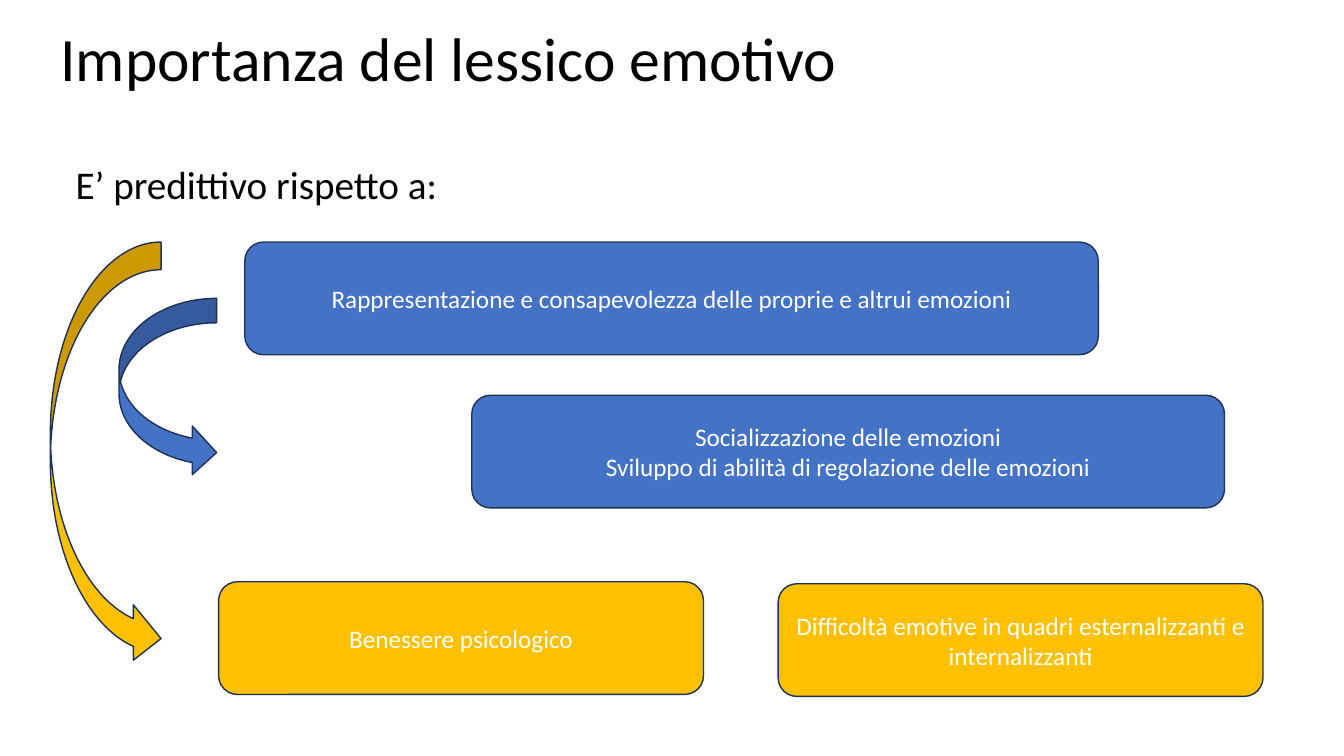
import pptx
import pptx.util
import pptx.dml.color
import pptx.enum.shapes
import pptx.enum.text
import lxml.etree

Cm, Pt = pptx.util.Cm, pptx.util.Pt
RGBColor = pptx.dml.color.RGBColor
MSO_SHAPE = pptx.enum.shapes.MSO_SHAPE
PP_ALIGN = pptx.enum.text.PP_ALIGN
MSO_ANCHOR = pptx.enum.text.MSO_ANCHOR
MSO_AUTO_SIZE = pptx.enum.text.MSO_AUTO_SIZE

BLUE = RGBColor(0x44, 0x72, 0xC4)
GOLD = RGBColor(0xFF, 0xC0, 0x00)
OUTLINE = RGBColor(0x1E, 0x32, 0x56)
BLACK = RGBColor(0, 0, 0)
WHITE = RGBColor(0xFF, 0xFF, 0xFF)
FONT = "Calibri"
BOX_HEIGHT = 2.84

# Content; positions and sizes in centimetres
TITLE = "Importanza del lessico emotivo"
INTRO = "E’ predittivo rispetto a:"
BOXES = [  # text, colour, left, top, width
    ("Socializzazione delle emozioni\n"
     "Sviluppo di abilità di regolazione delle emozioni", BLUE, 11.89, 9.96, 18.97),
    ("Rappresentazione e consapevolezza delle proprie e altrui emozioni",
     BLUE, 6.17, 6.1, 21.51),
    ("Difficoltà emotive in quadri esternalizzanti e internalizzanti",
     GOLD, 19.61, 14.71, 12.22),
    ("Benessere psicologico", GOLD, 5.51, 14.66, 12.22),
]
ARROWS = [  # colour, left, top, width, height
    (BLUE, 3, 7.52, 2.46, 4.5),
    (GOLD, 1.27, 6.1, 2.79, 10.69),
]


def write(sp, text, size, color, align, anchor):
    tf = sp.text_frame
    tf.text = text
    tf.word_wrap = True
    tf.auto_size = MSO_AUTO_SIZE.NONE
    tf.vertical_anchor = anchor
    for p in tf.paragraphs:
        p.alignment = align
        for r in p.runs:
            r.font.name = FONT
            r.font.size = Pt(size)
            r.font.color.rgb = color


def place(sp, left, top, width, height):
    sp.left, sp.top, sp.width, sp.height = map(Cm, (left, top, width, height))


def add_filled(s, kind, color, *box):
    sp = s.shapes.add_shape(kind, *map(Cm, box))
    sp.shadow.inherit = False
    sp.fill.solid()
    sp.fill.fore_color.rgb = color
    sp.line.color.rgb = OUTLINE
    sp.line.width = Pt(1)
    return sp


prs = pptx.Presentation()
prs.slide_width, prs.slide_height = Cm(33.87), Cm(19.05)
s = prs.slides.add_slide(prs.slide_layouts[1])

# Title and introductory line
title, body = s.placeholders
place(title, 1.27, -0.3, 29.21, 3.68)
write(title, TITLE, 44, BLACK, PP_ALIGN.LEFT, MSO_ANCHOR.MIDDLE)
title.text_frame.paragraphs[0].line_spacing = 0.9

place(body, 1.65, 4.04, 29.21, 12.09)
write(body, INTRO, 28, BLACK, PP_ALIGN.LEFT, MSO_ANCHOR.TOP)
p = body.text_frame.paragraphs[0]
p.line_spacing = 0.9
p.space_before = Pt(10)
pPr = p._p.get_or_add_pPr()
pPr.set("marL", "0")
pPr.set("indent", "0")
lxml.etree.SubElement(pPr, pptx.oxml.ns.qn("a:buNone"))

# Outcome boxes
for text, color, left, top, width in BOXES:
    sp = add_filled(s, MSO_SHAPE.ROUNDED_RECTANGLE, color, left, top, width, BOX_HEIGHT)
    write(sp, text, 18, WHITE, PP_ALIGN.CENTER, MSO_ANCHOR.MIDDLE)

# Curved arrows
for color, *box in ARROWS:
    add_filled(s, MSO_SHAPE.CURVED_RIGHT_ARROW, color, *box)

prs.save("out.pptx")
